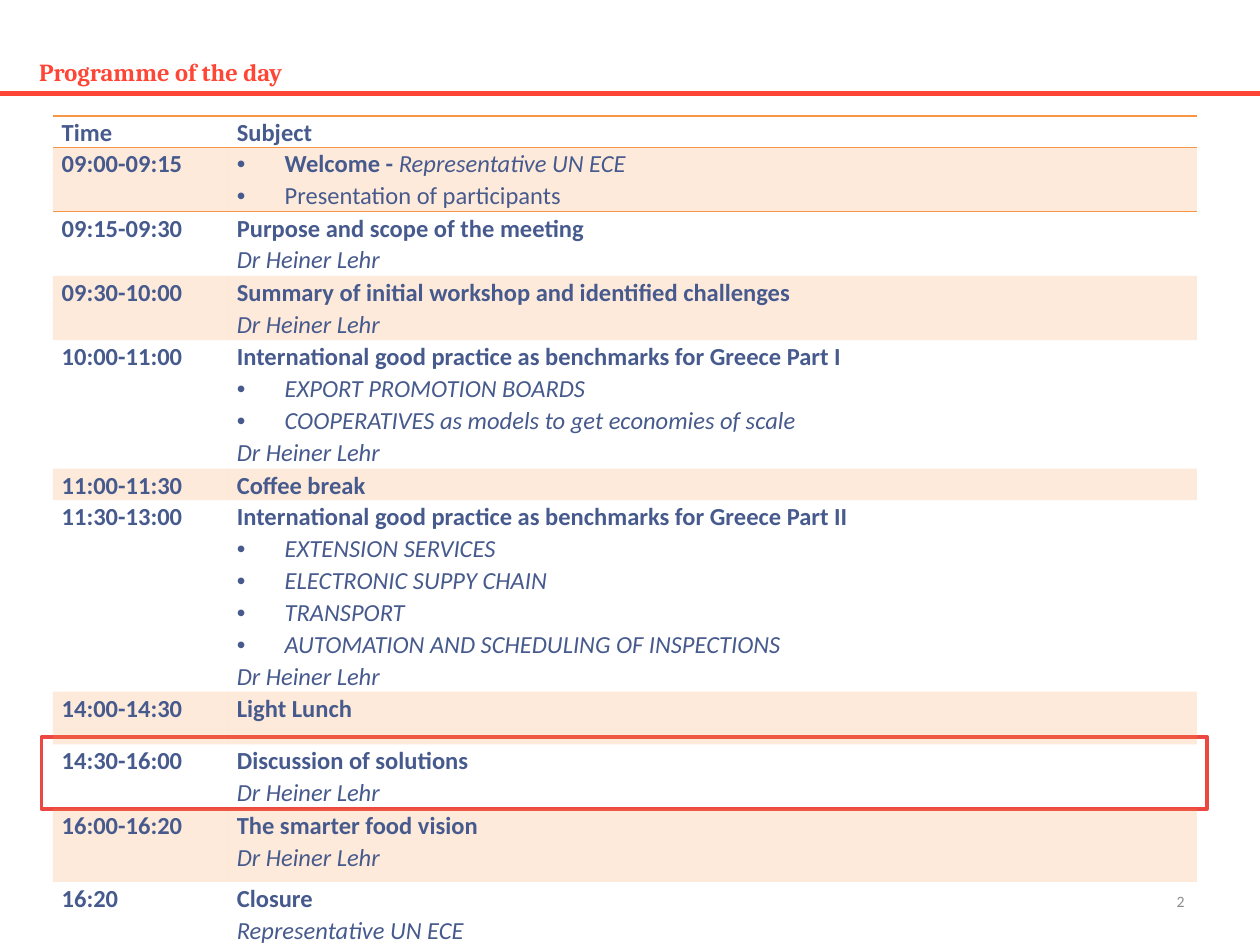
"""Build the programme slide: a timetable with one session highlighted."""
import pptx
import pptx.dml.color
import pptx.enum.shapes
import pptx.enum.text
import pptx.oxml
import pptx.oxml.ns
import pptx.util

THEME = {
    "title": {"name": "Cambria", "size": 14, "color": "FF4535", "bold": True},
    "strong": {"name": "Calibri", "size": 14, "color": "475A8D", "bold": True, "italic": False},
    "plain": {"name": "Calibri", "size": 14, "color": "475A8D", "bold": False, "italic": False},
    "italic": {"name": "Calibri", "size": 14, "color": "475A8D", "bold": False, "italic": True},
    "number": {"name": "Calibri", "size": 9, "color": "8C8C8C"},
    "rule": "FF4535",
    "highlight": "EC4841",
    "band": "F79646",
}
NAMESPACE = 'xmlns:a="http://schemas.openxmlformats.org/drawingml/2006/main"'
SPEAKER = (False, [("italic", "Dr Heiner Lehr")])
HOST = "Representative UN ECE"
PROGRAMME = [
    (0.25, "Time", [(False, [("strong", "Subject")])]),
    (0.51, "09:00-09:15", [
        (True, [("strong", "Welcome - "), ("italic", HOST)]),
        (True, [("plain", "Presentation of participants")])]),
    (0.51, "09:15-09:30", [(False, [("strong", "Purpose and scope of the meeting")]), SPEAKER]),
    (0.51, "09:30-10:00", [
        (False, [("strong", "Summary of initial workshop and identified challenges")]), SPEAKER]),
    (1.02, "10:00-11:00", [
        (False, [("strong", "International good practice as benchmarks for Greece Part I")]),
        (True, [("italic", "EXPORT PROMOTION BOARDS")]),
        (True, [("italic", "COOPERATIVES as models to get economies of scale")]),
        SPEAKER]),
    (0.25, "11:00-11:30", [(False, [("strong", "Coffee break")])]),
    (1.52, "11:30-13:00", [
        (False, [("strong", "International good practice as benchmarks for Greece Part II")]),
        (True, [("italic", "EXTENSION SERVICES")]),
        (True, [("italic", "ELECTRONIC SUPPY CHAIN")]),
        (True, [("italic", "TRANSPORT")]),
        (True, [("italic", "AUTOMATION AND SCHEDULING OF INSPECTIONS")]),
        SPEAKER]),
    (0.42, "14:00-14:30", [(False, [("strong", "Light Lunch")])]),
    (0.51, "14:30-16:00", [(False, [("strong", "Discussion of solutions")]), SPEAKER]),
    (0.58, "16:00-16:20", [(False, [("strong", "The smarter food vision")]), SPEAKER]),
    (0.5, "16:20", [(False, [("strong", "Closure")]), (False, [("italic", HOST)])]),
]


def add_run(paragraph, text, style):
    """Append a run in one of the theme's type styles."""
    run = paragraph.add_run()
    run.text = text
    values = dict(THEME[style])
    run.font.color.rgb = pptx.dml.color.RGBColor.from_string(values.pop("color"))
    values["size"] = pptx.util.Pt(values["size"])
    for attribute, value in values.items():
        setattr(run.font, attribute, value)


def box(left, top, width, height):
    """Return a left, top, width and height in inches as lengths."""
    return [pptx.util.Inches(value) for value in (left, top, width, height)]


presentation = pptx.Presentation()
presentation.slide_width, presentation.slide_height = box(0, 0, 10, 7.5)[2:]
slide = presentation.slides.add_slide(presentation.slide_layouts[5])

title = slide.shapes.title
title.left, title.top, title.width, title.height = box(0.21, 0.39, 9, 0.35)
title.text_frame.auto_size = pptx.enum.text.MSO_AUTO_SIZE.NONE
title.text_frame.vertical_anchor = pptx.enum.text.MSO_ANCHOR.MIDDLE
title.text_frame.paragraphs[0].alignment = pptx.enum.text.PP_ALIGN.LEFT
add_run(title.text_frame.paragraphs[0], "Programme of the day", "title")

rule_height = pptx.util.Inches(0.74)
rule = slide.shapes.add_connector(
    pptx.enum.shapes.MSO_CONNECTOR.STRAIGHT, 0, rule_height, presentation.slide_width, rule_height)
rule.line.color.rgb = pptx.dml.color.RGBColor.from_string(THEME["rule"])
rule.line.width = pptx.util.Pt(2.7)
rule._element.spPr.append(pptx.oxml.parse_xml(f"<a:effectLst {NAMESPACE}/>"))

number = slide.shapes.add_textbox(*box(7.17, 6.95, 2.33, 0.4)).text_frame
number.word_wrap = True
number.vertical_anchor = pptx.enum.text.MSO_ANCHOR.MIDDLE
number.paragraphs[0].alignment = pptx.enum.text.PP_ALIGN.RIGHT
add_run(number.paragraphs[0], "2", "number")

highlight = slide.shapes.add_shape(
    pptx.enum.shapes.MSO_SHAPE.RECTANGLE, *box(0.33, 5.85, 9.25, 0.57))
highlight.shadow.inherit = False
highlight.fill.background()
highlight.line.color.rgb = pptx.dml.color.RGBColor.from_string(THEME["highlight"])
highlight.line.width = pptx.util.Pt(2)

total_height = sum(height for height, _, _ in PROGRAMME)
timetable = slide.shapes.add_table(len(PROGRAMME), 2, *box(0.42, 0.92, 9.08, total_height)).table
timetable.first_row = timetable.horz_banding = False
style_id = timetable._tbl.tblPr.find(pptx.oxml.ns.qn("a:tableStyleId"))
style_id.text = "{2D5ABB26-0587-4C30-8999-92F81FD0307C}"
for column, width in zip(timetable.columns, (1.39, 7.69)):
    column.width = pptx.util.Inches(width)

cell_format = {
    "margin_left": pptx.util.Inches(0.07), "margin_right": pptx.util.Inches(0.07),
    "margin_top": 0, "margin_bottom": 0,
}
for index, (height, time, subject) in enumerate(PROGRAMME):
    timetable.rows[index].height = pptx.util.Inches(height)
    borders = {0: ("lnB", "lnT"), 1: ("lnT",)}.get(index, ())
    for column, lines in enumerate(([(False, [("strong", time)])], subject)):
        cell = timetable.cell(index, column)
        for attribute, value in cell_format.items():
            setattr(cell, attribute, value)
        cell.fill.background()
        if index % 2:
            cell.fill.solid()
            cell.fill.fore_color.rgb = pptx.dml.color.RGBColor.from_string(THEME["band"])
            color = cell._tc.tcPr.find(".//" + pptx.oxml.ns.qn("a:srgbClr"))
            color.append(pptx.oxml.parse_xml(f'<a:alpha {NAMESPACE} val="20000"/>'))
        for border in borders:
            cell._tc.tcPr.insert(0, pptx.oxml.parse_xml(
                f'<a:{border} {NAMESPACE} w="12700"><a:solidFill>'
                f'<a:srgbClr val="{THEME["band"]}"/></a:solidFill></a:{border}>'))
        for position, (bulleted, runs) in enumerate(lines):
            frame = cell.text_frame
            paragraph = frame.add_paragraph() if position else frame.paragraphs[0]
            paragraph.line_spacing = 1.07
            if bulleted:
                properties = paragraph._p.get_or_add_pPr()
                indent = pptx.util.Inches(0.38)
                properties.set("marL", str(indent))
                properties.set("indent", str(-indent))
                properties.append(pptx.oxml.parse_xml(f'<a:buFont {NAMESPACE} typeface="Arial"/>'))
                properties.append(pptx.oxml.parse_xml(f'<a:buChar {NAMESPACE} char="•"/>'))
            for style, text in runs:
                add_run(paragraph, text, style)

presentation.save("out.pptx")
